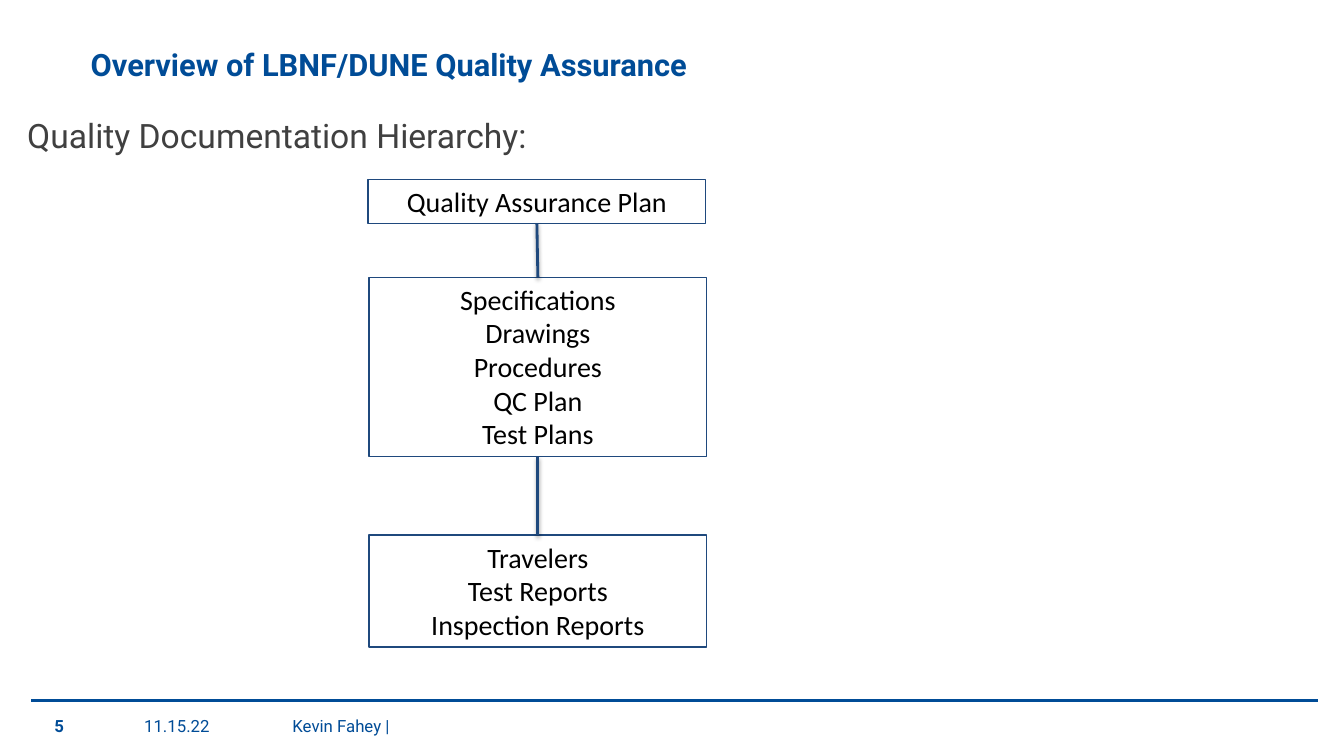
from lxml.etree import SubElement as Sub
from pptx import Presentation
from pptx.dml.color import RGBColor as RGB
from pptx.enum.shapes import MSO_CONNECTOR as Link, MSO_SHAPE as Kind
from pptx.enum.text import MSO_ANCHOR as Anchor, MSO_AUTO_SIZE as Fit, PP_ALIGN as Align
from pptx.oxml.ns import qn
from pptx.util import Inches, Pt

TITLE = "Overview of LBNF/DUNE Quality Assurance"
LEAD = "Quality Documentation Hierarchy:"
LEVELS = [
    (3.65, 1.78, ["Quality Assurance Plan"]),
    (3.66, 2.75, ["Specifications", "Drawings", "Procedures", "QC Plan", "Test Plans"]),
    (3.66, 5.31, ["Travelers", "Test Reports", "Inspection Reports"]),
]
FOOTER = [
    (0.54, 0.77, "5", True),
    (1.43, 1.1, "11.15.22", False),
    (2.9, 8.02, "Kevin Fahey |", False),
]
WIDE, HIGH = 13.33, 7.5
BOX, ROW, PAD = 3.35, 0.336, 0.1
BLUE = RGB(0x00, 0x4C, 0x97)
NAVY = RGB(0x1F, 0x49, 0x7D)
GREY = RGB(0x40, 0x40, 0x40)
BLACK = RGB(0, 0, 0)


def place(shape, *area):
    shape.left, shape.top, shape.width, shape.height = map(Inches, area)


def style(par, size, face, color, bold=False, align=Align.LEFT):
    par.alignment = align
    font = par.font
    font.size, font.name, font.bold = Pt(size), face, bold
    font.color.rgb = color


def setup(frame, anchor, inset=None):
    frame.word_wrap, frame.auto_size = True, Fit.NONE
    frame.vertical_anchor = anchor
    if inset is not None:
        frame.margin_left = frame.margin_right = Inches(inset)
        frame.margin_top = frame.margin_bottom = Inches(inset)


def add_rule(start, end, color):
    rule = slide.shapes.add_connector(Link.STRAIGHT, *map(Inches, start + end))
    rule.line.color.rgb, rule.line.width = color, Pt(2)
    return rule, Sub(rule._element.spPr, qn("a:effectLst"))


def add_shade(effects):
    shade = Sub(effects, qn("a:outerShdw"), blurRad=str(Pt(3.1)), dist=str(Pt(1.6)),
                dir="5400000", rotWithShape="0")
    tint = Sub(shade, qn("a:srgbClr"), val="000000")
    Sub(tint, qn("a:alpha"), val="38000")


def add_box(left, top, lines):
    size = BOX, PAD + ROW * len(lines)
    box = slide.shapes.add_shape(Kind.RECTANGLE, *map(Inches, (left, top) + size))
    box.shadow.inherit = False
    box.fill.background()
    box.line.color.rgb, box.line.width = NAVY, Pt(1)
    frame = box.text_frame
    setup(frame, Anchor.TOP)
    frame.text = "\n".join(lines)
    for par in frame.paragraphs:
        style(par, 20, "Calibri", BLACK, align=Align.CENTER)
    return box


deck = Presentation()
deck.slide_width, deck.slide_height = Inches(WIDE), Inches(HIGH)
slide = deck.slides.add_slide(deck.slide_layouts[1])

title, body = slide.placeholders
place(title, 0.8, 0.4, 6.67, 0.47)
setup(title.text_frame, Anchor.TOP)
title.text_frame.text = TITLE
style(title.text_frame.paragraphs[0], 22, "Roboto", BLUE, True)

place(body, 0.27, 1.14, 9.48, 5.45)
setup(body.text_frame, Anchor.TOP, 0)
body.text_frame.text = LEAD
lead = body.text_frame.paragraphs[0]
props = lead._p.get_or_add_pPr()
props.set("marL", "0")
props.set("indent", "0")
Sub(props, qn("a:buNone"))
lead.space_before = Pt(0)
style(lead, 24, "Roboto", GREY)

add_rule((0.31, 6.95), (13.07, 6.95), BLUE)
for left, width, text, bold in FOOTER:
    note = slide.shapes.add_textbox(*map(Inches, (left, 7.1, width, 0.2)))
    setup(note.text_frame, Anchor.BOTTOM, 0)
    note.text_frame.text = text
    style(note.text_frame.paragraphs[0], 12, "Roboto", BLUE, bold)

boxes = [add_box(*level) for level in LEVELS]
for upper, lower in zip(boxes, boxes[1:]):
    link, effects = add_rule((0, 0), (1, 1), NAVY)
    link.begin_connect(upper, 2)
    link.end_connect(lower, 0)
    add_shade(effects)

deck.save("out.pptx")
